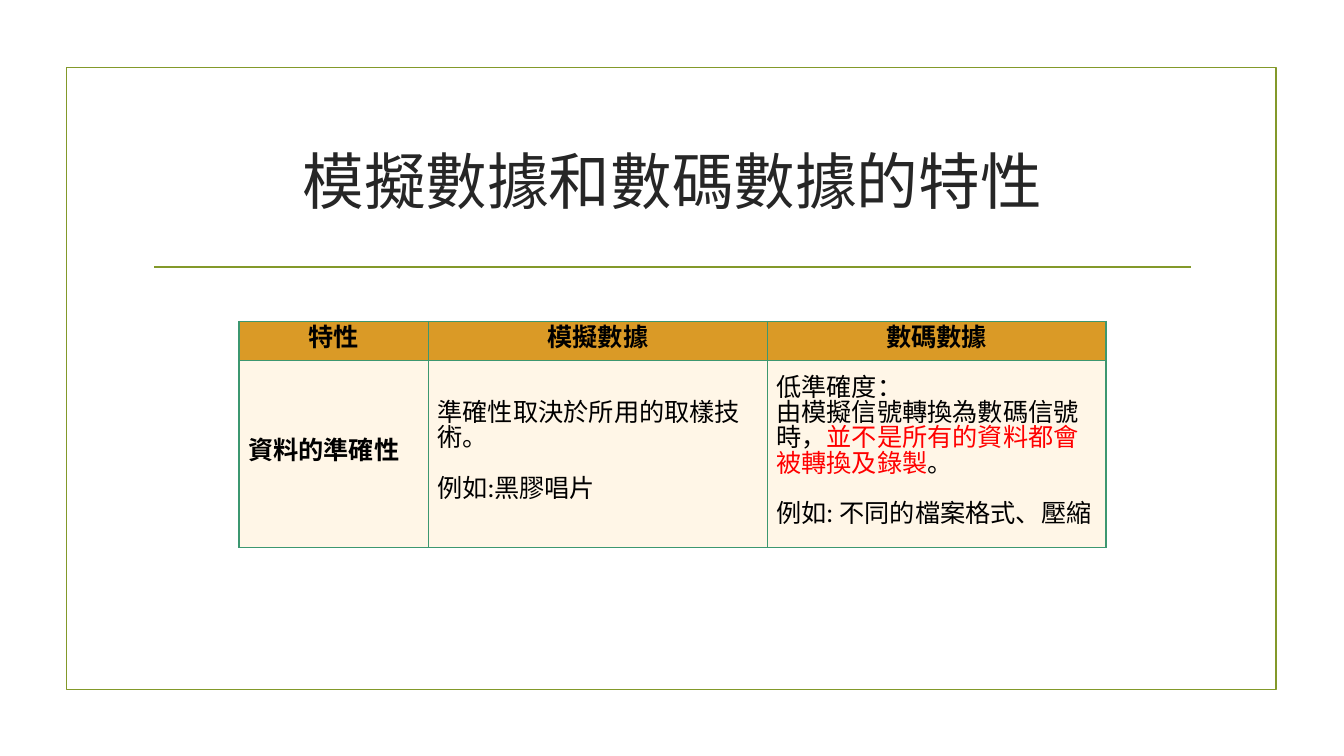
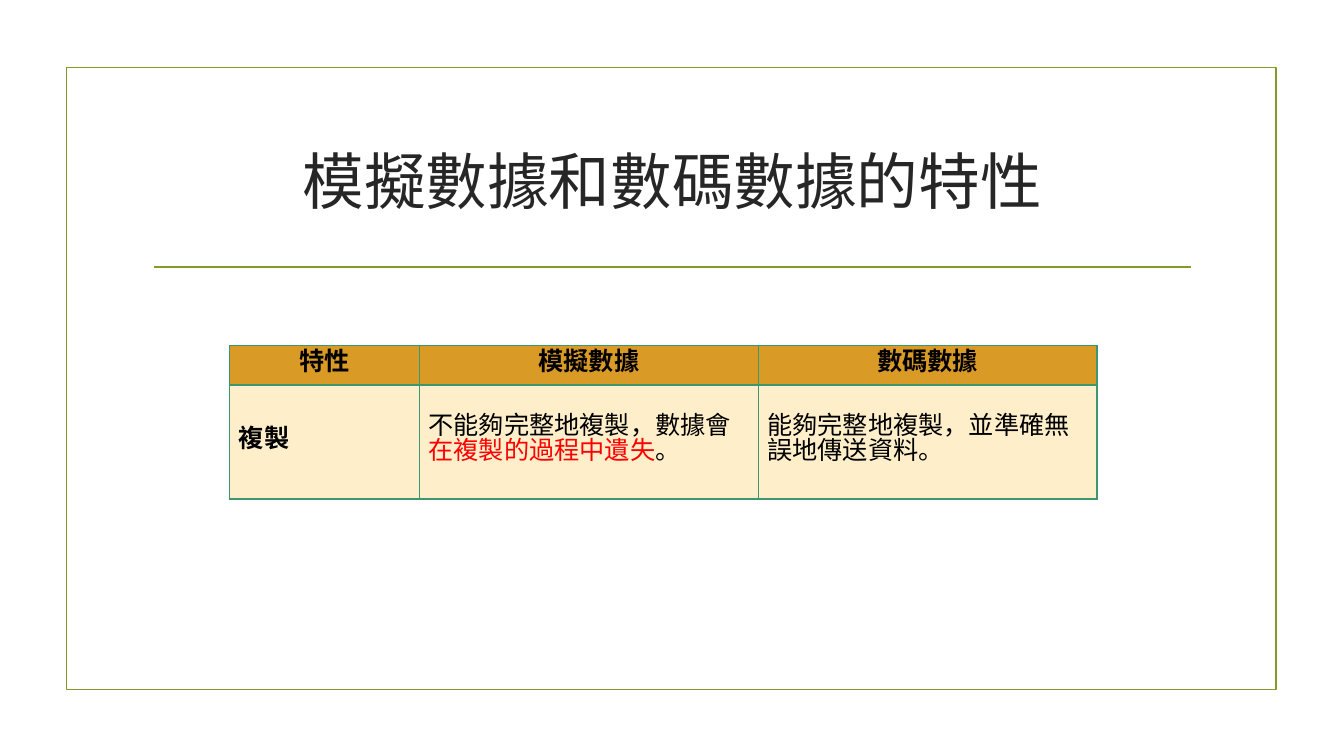
from lxml import etree
from pptx import Presentation
from pptx import util as u
from pptx.dml.color import RGBColor
from pptx.enum import shapes, text
from pptx.oxml.ns import qn

PX = 9144  # one px is a hundredth of an inch

OLIVE = RGBColor(0x83, 0x99, 0x2A)
TITLE_GREY = RGBColor(0x26, 0x26, 0x26)
BLACK = RGBColor(0x00, 0x00, 0x00)
RED = RGBColor(0xFF, 0x00, 0x00)
HEADER_GOLD = RGBColor(0xDA, 0x9A, 0x26)
PALE_CREAM = RGBColor(0xFF, 0xF6, 0xE7)
CREAM = RGBColor(0xFE, 0xEF, 0xCA)
BORDER_GREEN = RGBColor(0x3C, 0x97, 0x70)

TITLE = "模擬數據和數碼數據的特性"
HEADERS = ["特性", "模擬數據", "數碼數據"]
COLUMN_WIDTHS = [188, 336, 336]
HEADER_HEIGHT = 39
LINE_HEIGHT = u.Pt(18)

# A cell is a list of blocks set one line apart; a block is a list of
# paragraphs; a paragraph is a list of runs, of which every second is red.
TABLES = [
    dict(left=237, top=319, body_height=185, fill=PALE_CREAM, body=[
        [[["資料的準確性"]]],
        [[["準確性取決於所用的取樣技術。"]], [["例如:黑膠唱片"]]],
        [[["低準確度："],
          ["由模擬信號轉換為數碼信號時，", "並不是所有的資料都會被轉換及錄製", "。"]],
         [["例如: 不同的檔案格式、壓縮"]]],
    ]),
    dict(left=228, top=343, body_height=113, fill=CREAM, body=[
        [[["複製"]]],
        [[["不能夠完整地複製，數據會", "在複製的過程中遺失", "。"]]],
        [[["能夠完整地複製，並準確無誤地傳送資料。"]]],
    ]),
]


def add_borders(cell):
    properties = cell._tc.get_or_add_tcPr()
    for position, side in enumerate(("a:lnL", "a:lnR", "a:lnT", "a:lnB")):
        line = etree.Element(qn(side), w=str(u.Pt(1)))
        fill = etree.SubElement(line, qn("a:solidFill"))
        etree.SubElement(fill, qn("a:srgbClr"), val=str(BORDER_GREEN))
        properties.insert(position, line)


def fill_cell(cell, blocks, fill, bold, alignment):
    cell.fill.solid()
    cell.fill.fore_color.rgb = fill
    add_borders(cell)
    cell.vertical_anchor = text.MSO_ANCHOR.MIDDLE
    cell.margin_left = cell.margin_right = 9 * PX
    cell.margin_top = cell.margin_bottom = 5 * PX
    frame = cell.text_frame
    for block_index, block in enumerate(blocks):
        for line_index, runs in enumerate(block):
            first = block_index == line_index == 0
            paragraph = frame.paragraphs[0] if first else frame.add_paragraph()
            paragraph.alignment = alignment
            paragraph.line_spacing = LINE_HEIGHT
            if block_index and not line_index:
                paragraph.space_before = LINE_HEIGHT
            paragraph.font.name = "Lato"
            paragraph.font.size = u.Pt(18)
            paragraph.font.bold = bold
            paragraph.font.color.rgb = BLACK
            for run_index, words in enumerate(runs):
                run = paragraph.add_run()
                run.text = words
                if run_index % 2:
                    run.font.color.rgb = RED


presentation = Presentation()
presentation.slide_width = 1333 * PX
presentation.slide_height = 750 * PX

for content in TABLES:
    slide = presentation.slides.add_slide(presentation.slide_layouts[6])

    border = slide.shapes.add_shape(
        shapes.MSO_SHAPE.RECTANGLE, 66 * PX, 67 * PX, 1200 * PX, 617 * PX)
    border.shadow.inherit = False
    border.fill.background()
    border.line.color.rgb = OLIVE
    border.line.width = u.Pt(1.25)

    rule = slide.shapes.add_connector(
        shapes.MSO_CONNECTOR.STRAIGHT, 153 * PX, 265 * PX, 1181 * PX, 265 * PX)
    rule.line.color.rgb = OLIVE
    rule.line.width = u.Pt(1.25)
    etree.SubElement(rule._element.spPr, qn("a:effectLst"))

    title = slide.shapes.add_textbox(142 * PX, 107 * PX, 1050 * PX, 143 * PX)
    title.text_frame.word_wrap = True
    title.text_frame.vertical_anchor = text.MSO_ANCHOR.MIDDLE
    paragraph = title.text_frame.paragraphs[0]
    paragraph.text = TITLE
    paragraph.alignment = text.PP_ALIGN.CENTER
    paragraph.font.name = "Times New Roman"
    paragraph.font.size = u.Pt(44)
    paragraph.font.color.rgb = TITLE_GREY

    row_heights = [HEADER_HEIGHT, content["body_height"]]
    table = slide.shapes.add_table(
        len(row_heights), len(HEADERS), content["left"] * PX, content["top"] * PX,
        sum(COLUMN_WIDTHS) * PX, sum(row_heights) * PX).table
    table.first_row = table.horz_banding = False
    for row, height in zip(table.rows, row_heights):
        row.height = height * PX
    for index, width in enumerate(COLUMN_WIDTHS):
        table.columns[index].width = width * PX
        fill_cell(table.cell(0, index), [[[HEADERS[index]]]], HEADER_GOLD,
                  True, text.PP_ALIGN.CENTER)
        fill_cell(table.cell(1, index), content["body"][index], content["fill"],
                  index == 0, text.PP_ALIGN.LEFT)

presentation.save("out.pptx")
